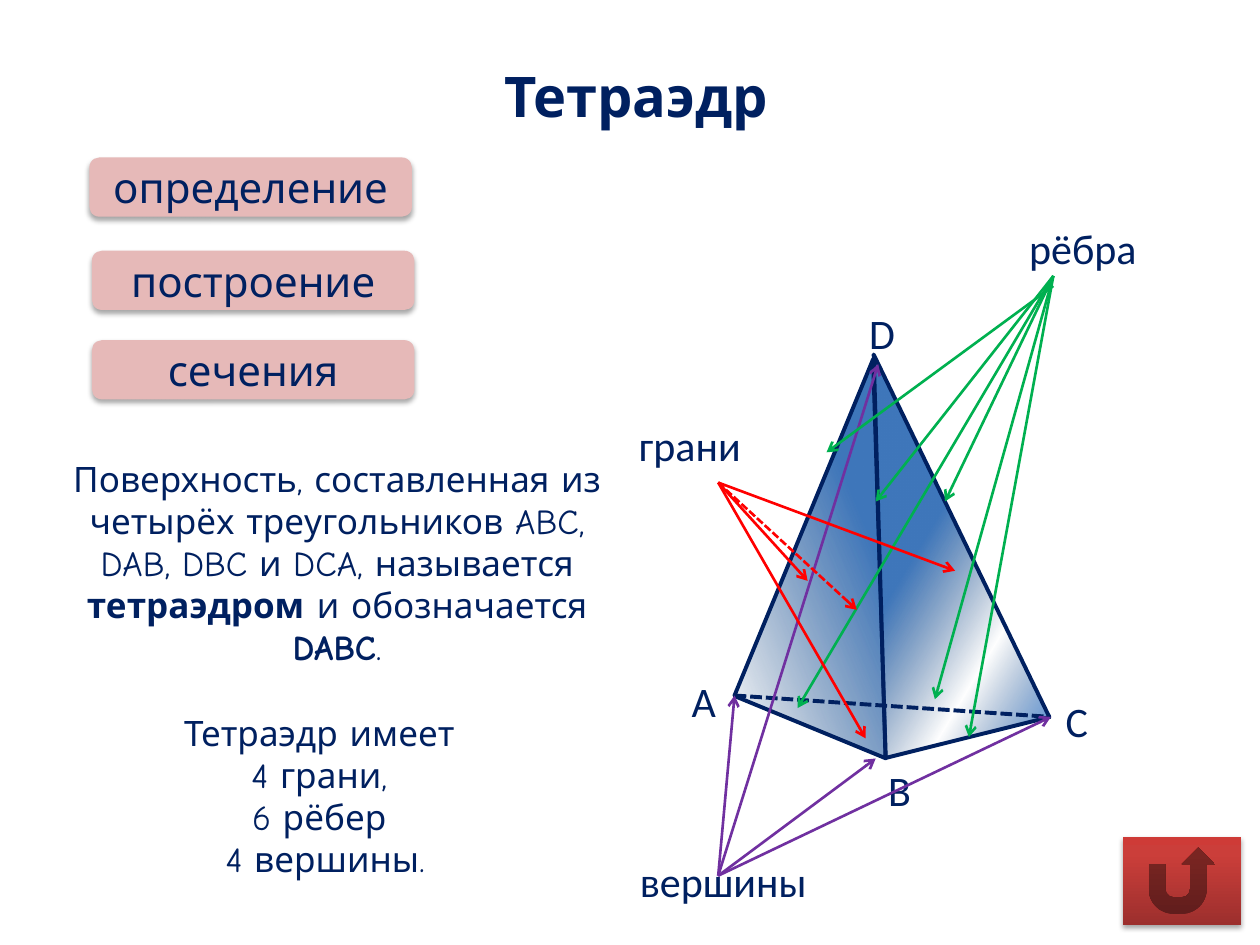
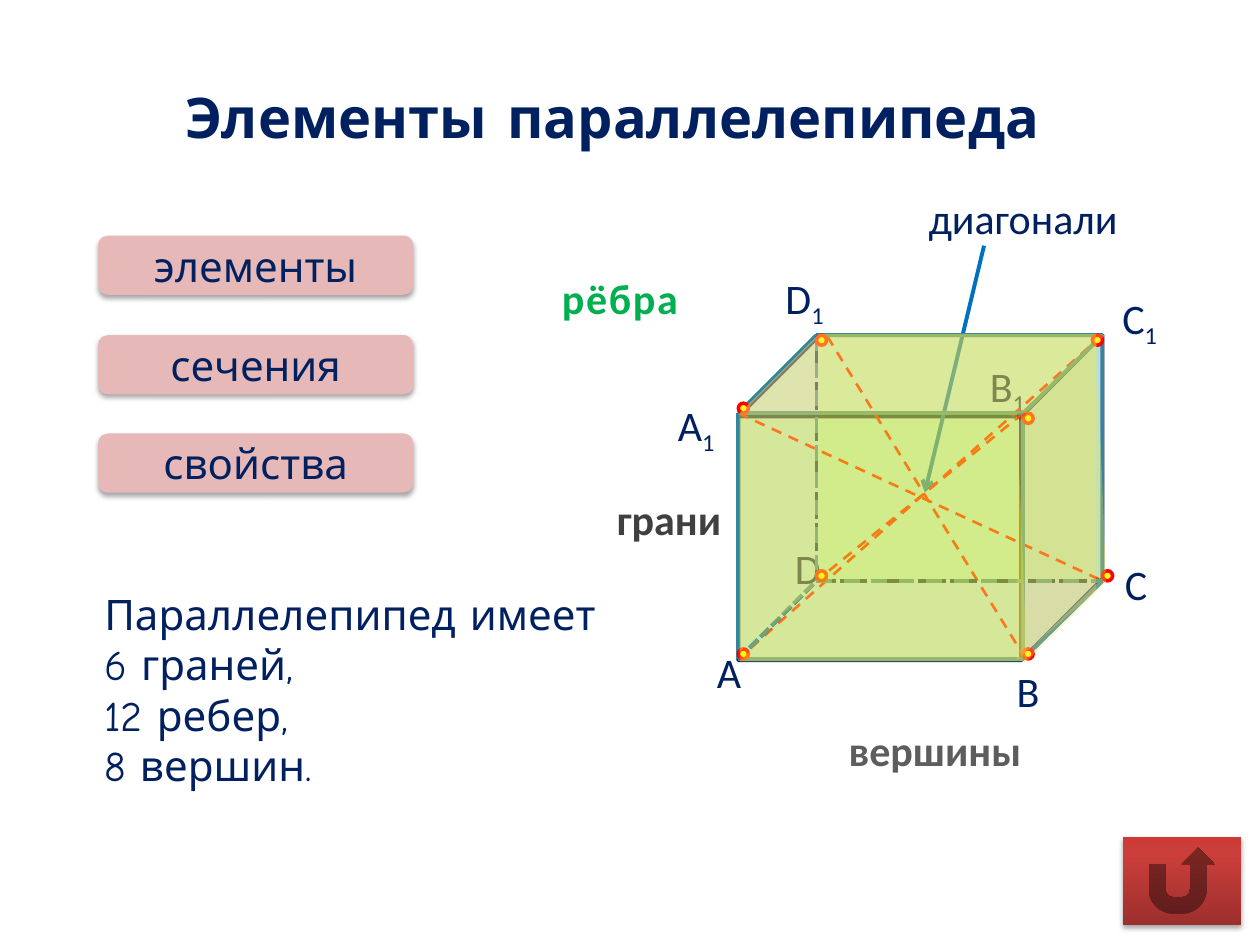
from copy import deepcopy
from lxml import etree
from pptx import Presentation, util as u
from pptx.dml.color import RGBColor
from pptx.enum import dml, shapes, text
from pptx.oxml.ns import qn

NAVY, GREEN, PURPLE, RED, TEAL = "002060", "00B050", "7030A0", "FF0000", "31859C"
DOTS, DASH = dml.MSO_LINE.SQUARE_DOT, dml.MSO_LINE.DASH
CENTER, LEFT = text.PP_ALIGN.CENTER, text.PP_ALIGN.LEFT
SHAPE = shapes.MSO_SHAPE
COLUMNS, ROWS = 100, 75
CELL = u.Inches(0.1)
TITLE = {"name": "Comic Neue", "size": u.Pt(32), "bold": True}
BUTTON = {"name": "Karla", "size": u.Pt(24)}
LABEL = {"name": "Calibri", "size": u.Pt(24)}
BODY = {"name": "Comic Neue", "size": u.Pt(20)}
rgb = RGBColor.from_string


def grid(*cells):
    return [round(cell * CELL) for cell in cells]


def write(shape, paragraphs, values, color=NAVY, alignment=CENTER):
    frame = shape.text_frame
    frame.word_wrap = True
    for index, runs in enumerate(paragraphs):
        paragraph = frame.add_paragraph() if index else frame.paragraphs[0]
        paragraph.alignment = alignment
        for content, bold in [(runs, False)] if isinstance(runs, str) else runs:
            run = paragraph.add_run()
            run.text = content
            run.font.bold = bold
            for name, value in values.items():
                setattr(run.font, name, value)
            run.font.color.rgb = rgb(color)
    return run


presentation = Presentation()
presentation.slide_width, presentation.slide_height = grid(COLUMNS, ROWS)
blank = presentation.slide_layouts[6]
tetrahedron = presentation.slides.add_slide(blank)
parallelepiped = presentation.slides.add_slide(blank)
gradients, shadowed, translucent = [], [], []

for box, rotation, apex, angle, middle in [
    ((63.3, 29.9, 13, 28.9), 22.4, 0, 135, 100),
    ((66.3, 27.7, 13.4, 31.3), 346, 0.51, 45, 76),
]:
    face = tetrahedron.shapes.add_shape(SHAPE.ISOSCELES_TRIANGLE, *grid(*box))
    face.rotation = rotation
    face.adjustments[0] = apex
    face.shadow.inherit = False
    face.line.color.rgb = rgb(NAVY)
    face.line.width = u.Pt(2.25)
    stops = [(50, "3F77BB", 100), (middle, "2D5484", 0), (100, "4B8DDE", 100)]
    gradients.append((face, angle, stops))

cube = parallelepiped.shapes.add_shape(SHAPE.CUBE, *grid(58.6, 26.6, 28.9, 25.8))
cube.shadow.inherit = False
cube.fill.solid()
cube.fill.fore_color.rgb = rgb("00B0F0")
cube.line.color.rgb = rgb(NAVY)
cube.line.width = u.Pt(2.25)
translucent.append((cube, 30))

for slide, box, title in [
    (tetrahedron, (37.2, 4.4, 26.6, 6.4), "Тетраэдр"),
    (parallelepiped, (7, 6.1, 84.8, 6.4), "Элементы параллелепипеда "),
]:
    write(slide.shapes.add_textbox(*grid(*box)), [title], TITLE)

for slide, left, top, width, caption in [
    (tetrahedron, 7.1, 12.5, 25.6, "определение"),
    (tetrahedron, 7.3, 19.9, 25.6, "построение"),
    (tetrahedron, 7.3, 27, 25.6, "сечения"),
    (parallelepiped, 7.8, 18.7, 25, "элементы"),
    (parallelepiped, 7.8, 26.6, 25, "сечения"),
    (parallelepiped, 7.8, 34.4, 25, "свойства"),
]:
    button = slide.shapes.add_shape(SHAPE.ROUNDED_RECTANGLE, *grid(left, top, width, 4.7))
    button.fill.solid()
    button.fill.fore_color.rgb = rgb("E6B9B8")
    button.text_frame.vertical_anchor = text.MSO_ANCHOR.MIDDLE
    write(button, [caption], BUTTON)
    shadowed.append(button)

for slide in (tetrahedron, parallelepiped):
    back = slide.shapes.add_shape(SHAPE.ACTION_BUTTON_RETURN, *grid(89.1, 66.4, 9.4, 7))
    stops = [(0, "9C2F2D", 100), (80, "CB3E3A", 100), (100, "CE3B37", 100)]
    gradients.append((back, 270, stops))
    shadowed.append(back)

definition = [[
    ("Поверхность, составленная из четырёх треугольников ABC, DAB, DBC и DCA, называется ", False),
    ("тетраэдром ", True), ("и обозначается ", False), ("DABC", True), (".", False),
]]
tetrahedron_counts = ["Тетраэдр имеет ", "4 грани, ", "6 рёбер ", "4 вершины."]
parallelepiped_counts = ["Параллелепипед имеет", "6 граней,", "12 ребер,", "8 вершин."]
for slide, box, paragraphs, values, alignment in [
    (tetrahedron, (3.5, 35.8, 46.5, 17.8), definition, BODY, CENTER),
    (tetrahedron, (3.9, 56, 43.8, 14.5), tetrahedron_counts, BODY, CENTER),
    (parallelepiped, (7.3, 46.2, 42.4, 21.2), parallelepiped_counts, BODY | {"size": u.Pt(24)}, LEFT),
]:
    write(slide.shapes.add_textbox(*grid(*box)), paragraphs, values, alignment=alignment)

for slide, left, top, width, caption, color in [
    (tetrahedron, 68, 23.9, 3.5, "D", NAVY),
    (tetrahedron, 53.9, 53.1, 3.5, "A", NAVY),
    (tetrahedron, 69.5, 60.2, 3.5, "B", NAVY),
    (tetrahedron, 83.6, 54.7, 3.5, "C", NAVY),
    (tetrahedron, 47.7, 32.8, 14.1, "грани", NAVY),
    (tetrahedron, 78.9, 17.2, 14.1, "рёбра", NAVY),
    (tetrahedron, 48.8, 67.4, 17.2, "вершины", NAVY),
    (parallelepiped, 55.9, 50.8, 3.5, "A", NAVY),
    (parallelepiped, 79.7, 52.3, 3.5, "B", NAVY),
    (parallelepiped, 88.3, 43.8, 3.5, "C", NAVY),
    (parallelepiped, 62.1, 42.6, 3.5, "D", NAVY),
    (parallelepiped, 69.5, 14.8, 23.4, "диагонали", NAVY),
    (parallelepiped, 41.4, 38.7, 23.4, "грани", "404040"),
    (parallelepiped, 37.5, 21.1, 23.4, "рёбра", GREEN),
    (parallelepiped, 62.5, 57, 23.4, "вершины", "5D5D5D"),
]:
    label = slide.shapes.add_textbox(*grid(left, top, width, 5))
    run = write(label, [[(caption, color != NAVY)]], LABEL, color)
    if color == GREEN:
        run._r.get_or_add_rPr().set("spc", "100")

for left, top, letter in [(52.3, 31.2, "A"), (60.9, 21.1, "D"), (87.5, 22.7, "C"), (77, 28.1, "B")]:
    label = parallelepiped.shapes.add_textbox(*grid(left, top, 5.9, 5))
    run = write(label, [[(letter, False), ("1", False)]], LABEL)
    run._r.get_or_add_rPr().set("baseline", "-25000")

corners = {
    "A": (58.6, 52.3), "B": (81.2, 52.3), "C": (87.5, 46.1), "D": (64.8, 46.1),
    "A1": (58.6, 32.8), "B1": (81.2, 32.8), "C1": (87.5, 26.6), "D1": (64.8, 26.6),
}
edge_source, face_source, vertex_source = (83.6, 21.9), (57, 38.3), (57, 69.5)
lines = [(tetrahedron, (58.3, 55.2), (83.4, 56.9), NAVY, 2.25, DOTS, False)]
for source, color, targets in [
    (edge_source, GREEN, [(75, 39.8), (69.5, 39.8), (74.2, 55.5), (76.9, 58.5), (63.3, 56.2)]),
    (vertex_source, PURPLE, [(58.3, 55.2), (69.5, 60.2), (69.7, 28.9), (83.4, 56.9)]),
    (face_source, RED, [(64.1, 46.1), (75.8, 45.3), (68.7, 58.6)]),
]:
    lines += [(tetrahedron, source, target, color, 1.5, None, True) for target in targets]
lines += [
    (tetrahedron, (83.6, 22.7), (65.6, 35.9), GREEN, 1.5, None, True),
    (tetrahedron, face_source, (68, 48.4), RED, 1.5, DOTS, True),
    (parallelepiped, (78.1, 19.5), (73.4, 39.1), "0070C0", 2.25, None, True),
    (parallelepiped, (81.4, 52.3), (65.6, 26.6), RED, 1.5, DASH, False),
]
for color, width, dash, pairs in [
    (NAVY, 2.25, DOTS, "A-D D1-D C-D"),
    (RED, 1.5, DASH, "C1-A B1-D A1-C"),
    (TEAL, 2.25, None, "A-B B1-B A1-B1 A1-A D1-C1 C1-C B-C A1-D1 B1-C1"),
    (TEAL, 2.25, DASH, "D-C D1-D"),
    (TEAL, 2.25, DOTS, "A-D"),
]:
    for pair in pairs.split():
        start, end = pair.split("-")
        lines.append((parallelepiped, corners[start], corners[end], color, width, dash, False))

for slide, start, end, color, width, dash, arrow in lines:
    line = slide.shapes.add_connector(shapes.MSO_CONNECTOR.STRAIGHT, *grid(*start, *end))
    line.line.color.rgb = rgb(color)
    line.line.width = u.Pt(width)
    if dash:
        line.line.dash_style = dash
    properties = line.element.spPr
    if arrow:
        etree.SubElement(properties.find(qn("a:ln")), qn("a:tailEnd"), type="arrow")
    etree.SubElement(properties, qn("a:effectLst"))

DOT = 0.8
dot_shifts = {"B1": (0, 0), "D1": (0, 0), "C1": (-DOT, 0)}
for name, (x, y) in corners.items():
    shift_x, shift_y = dot_shifts.get(name, (0, -DOT))
    dot = parallelepiped.shapes.add_shape(
        SHAPE.FLOWCHART_CONNECTOR, *grid(x + shift_x, y + shift_y, DOT, DOT))
    dot.shadow.inherit = False
    dot.fill.solid()
    dot.fill.fore_color.rgb = rgb("FFFF00")
    dot.line.color.rgb = rgb(RED)
    dot.line.width = u.Pt(2)

for color, opacity, points in [
    ("FFDE66", 29, [(58.7, 32.8), (65, 26.5), (65, 46.2), (58.7, 51.7)]),
    ("FFDE66", 29, [(80.7, 33.6), (87, 27.3), (87, 46.9), (80.7, 52.4)]),
    ("FFDE66", 30, [(58.7, 32.8), (81.5, 32.8), (87.8, 26.5), (65, 26.5)]),
    ("FFDE66", 30, [(58.7, 52.5), (81.5, 52.5), (87.8, 46.2), (65, 46.2)]),
    ("F0F028", 31, [(58.7, 32.8), (80.7, 32.8), (81.5, 52.5), (58.7, 52.5)]),
    ("F0F028", 31, [(65, 26.5), (87, 26.5), (87.8, 46.2), (65, 46.2)]),
]:
    outline = parallelepiped.shapes.build_freeform(*grid(*points[0]))
    outline.add_line_segments([grid(*point) for point in points[1:]], close=True)
    face = outline.convert_to_shape()
    face.shadow.inherit = False
    face.fill.solid()
    face.fill.fore_color.rgb = rgb(color)
    face.line.fill.background()
    translucent.append((face, opacity))

for shape, opacity in translucent:
    color = shape.element.spPr.find(qn("a:solidFill")).find(qn("a:srgbClr"))
    etree.SubElement(color, qn("a:alpha"), val=str(opacity * 1000))

for shape, angle, stops in gradients:
    shape.fill.gradient()
    gradient = shape.element.spPr.find(qn("a:gradFill"))
    stop_list = gradient.find(qn("a:gsLst"))
    stop_list.append(deepcopy(stop_list[0]))
    gradient.find(qn("a:lin")).set("ang", str(angle * 60000))
    for stop, element, (position, color, opacity) in zip(shape.fill.gradient_stops, stop_list, stops):
        stop.position = position / 100
        stop.color.rgb = rgb(color)
        if opacity < 100:
            etree.SubElement(element[0], qn("a:alpha"), val=str(opacity * 1000))

for shape in shadowed:
    shape.line.fill.background()
    shape.shadow.inherit = False
    effects = shape.element.spPr.find(qn("a:effectLst"))
    shadow = etree.SubElement(effects, qn("a:outerShdw"), blurRad=str(u.Pt(3.1)),
                              dist=str(u.Pt(1.8)), dir="5400000", rotWithShape="0")
    color = etree.SubElement(shadow, qn("a:srgbClr"), val=str(rgb("000000")))
    etree.SubElement(color, qn("a:alpha"), val="35000")

presentation.save("out.pptx")
